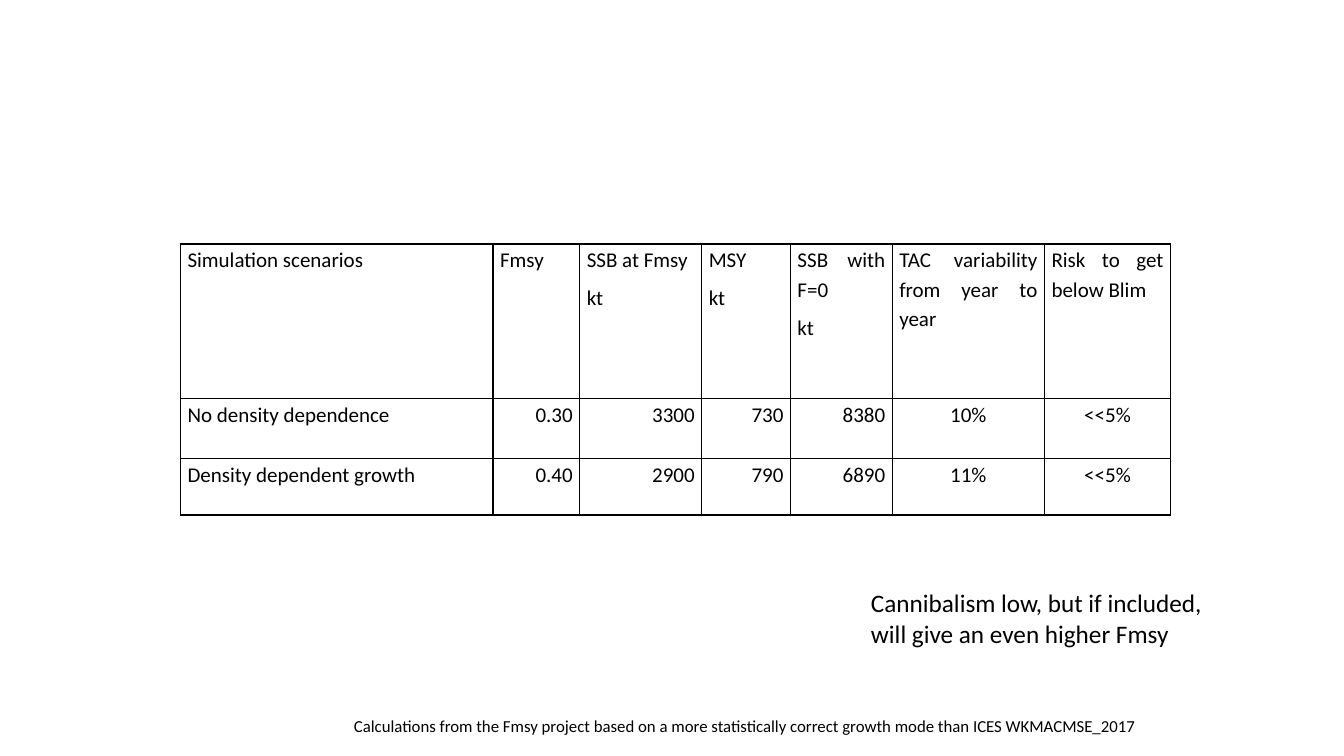
import dataclasses

import lxml.etree
import pptx
import pptx.dml.color
import pptx.enum.text
import pptx.oxml.ns
import pptx.util

Inches = pptx.util.Inches
Pt = pptx.util.Pt
Align = pptx.enum.text.PP_ALIGN


@dataclasses.dataclass(frozen=True)
class Theme:
    font: str = "Calibri"
    ink: str = "000000"
    source_size: int = 12
    table_size: int = 15
    remark_size: int = 18
    border: int = 1


theme = Theme()


def style(para, size, align):
    para.alignment = align
    para.font.name = theme.font
    para.font.size = Pt(size)
    para.font.color.rgb = pptx.dml.color.RGBColor.from_string(theme.ink)


def add_borders(cell):
    properties = cell._tc.get_or_add_tcPr()
    for position, side in enumerate(("a:lnL", "a:lnR", "a:lnT", "a:lnB")):
        line = lxml.etree.Element(pptx.oxml.ns.qn(side), w=str(Pt(theme.border)))
        fill = lxml.etree.SubElement(line, pptx.oxml.ns.qn("a:solidFill"))
        lxml.etree.SubElement(fill, pptx.oxml.ns.qn("a:srgbClr"), val=theme.ink)
        properties.insert(position, line)


deck = pptx.Presentation()
deck.slide_width = Inches(13.33)
deck.slide_height = Inches(7.5)
page = deck.slides.add_slide(deck.slide_layouts[5])

source = page.shapes.title
source.left, source.top = Inches(3.41), Inches(6.95)
source.width, source.height = Inches(11.5), Inches(0.53)
source.text_frame.text = (
    "Calculations from the Fmsy project based on a more statistically "
    "correct growth mode than ICES WKMACMSE_2017"
)
source.text_frame.auto_size = pptx.enum.text.MSO_AUTO_SIZE.NONE
source.text_frame.vertical_anchor = pptx.enum.text.MSO_ANCHOR.MIDDLE
source_para = source.text_frame.paragraphs[0]
style(source_para, theme.source_size, Align.LEFT)
source_para.line_spacing = 0.9

scenarios = [
    ["Simulation scenarios", "Fmsy", "SSB at Fmsy \nkt", "MSY\nkt",
     "SSB with F=0\nkt", "TAC variability from year to year", "Risk to get below Blim"],
    ["No density dependence", "0.30", "3300", "730", "8380", "10%", "<<5%"],
    ["Density dependent growth", "0.40", "2900", "790", "6890", "11%", "<<5%"],
]
column_widths = [3.1, 0.86, 1.21, 0.88, 1.01, 1.51, 1.25]
row_heights = [1.53, 0.6, 0.56]
value_aligns = [Align.JUSTIFY] + [Align.RIGHT] * 4 + [Align.CENTER] * 2

table = page.shapes.add_table(
    len(row_heights), len(column_widths), Inches(1.79), Inches(2.42),
    Inches(sum(column_widths)), Inches(sum(row_heights)),
).table
table.first_row = False
table.horz_banding = False
for column, width in zip(table.columns, column_widths):
    column.width = Inches(width)
for row, height in zip(table.rows, row_heights):
    row.height = Inches(height)

for row_index, texts in enumerate(scenarios):
    for column_index, text in enumerate(texts):
        cell = table.cell(row_index, column_index)
        cell.text = text
        cell.margin_left = cell.margin_right = Inches(0.07)
        cell.margin_top = cell.margin_bottom = 0
        cell.fill.background()
        add_borders(cell)
        align = value_aligns[column_index] if row_index else Align.JUSTIFY
        for para in cell.text_frame.paragraphs:
            style(para, theme.table_size, align)
            para.line_spacing = 1.15
            para.space_after = Pt(6)

remark = page.shapes.add_textbox(Inches(8.54), Inches(5.78), Inches(3.72), Inches(0.71))
remark.text_frame.word_wrap = True
remark.text_frame.auto_size = pptx.enum.text.MSO_AUTO_SIZE.SHAPE_TO_FIT_TEXT
remark.text_frame.text = "Cannibalism low, but if included, will give an even higher Fmsy"
style(remark.text_frame.paragraphs[0], theme.remark_size, Align.LEFT)

deck.save("out.pptx")
